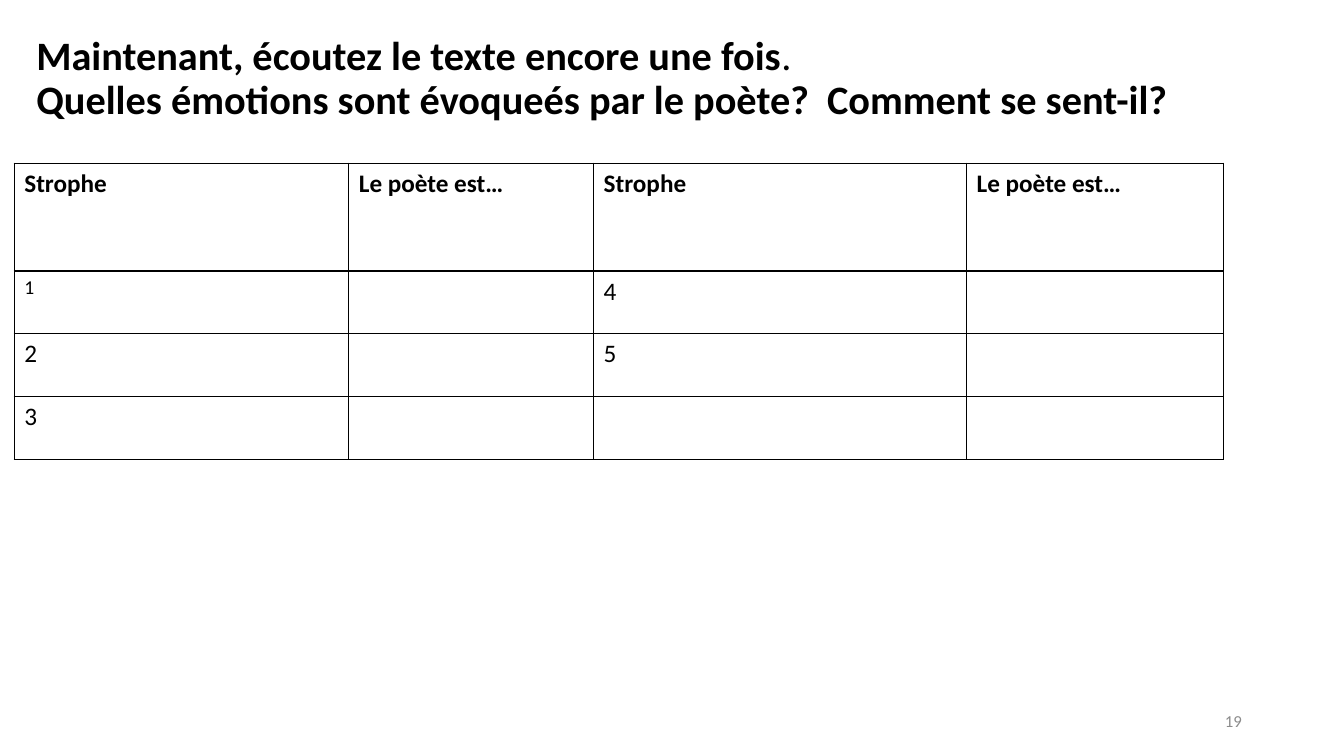
"""Build a slide with a listening question and a table of stanzas and emotions."""
from dataclasses import dataclass

import lxml.etree
import pptx
import pptx.dml.color
import pptx.enum.text
import pptx.oxml.ns
import pptx.util

Cm, Pt = pptx.util.Cm, pptx.util.Pt
RGB = pptx.dml.color.RGBColor
ALIGN = pptx.enum.text.PP_ALIGN
MIDDLE = pptx.enum.text.MSO_ANCHOR.MIDDLE
qn = pptx.oxml.ns.qn

TITLE_LINES = [
    [("Maintenant, écoutez le texte encore une fois", True), (".", False)],
    [("Quelles émotions sont évoqueés par le poète?  Comment se sent-il?", True)],
]
HEADINGS = ["Strophe", "Le poète est…"] * 2
STANZAS = [["1", "", "4", ""], ["2", "", "5", ""], ["3", "", "", ""]]
PAGE_NUMBER = "19"

COL_WIDTHS = [8.43, 6.17, 9.4, 6.48]
ROW_HEIGHTS = [2.72] + [1.58] * len(STANZAS)


@dataclass(frozen=True)
class Theme:
    font: str = "Calibri"
    ink: str = "000000"
    paper: str = "FFFFFF"
    muted: str = "8C8C8C"
    title: float = 28.8
    body: float = 18
    first: float = 14
    number: float = 12
    border: float = 1


THEME = Theme()


def add_run(p, text, size, color=THEME.ink, bold=False):
    r = p.add_run()
    r.text = text
    r.font.name = THEME.font
    r.font.size = Pt(size)
    r.font.bold = bold
    r.font.color.rgb = RGB.from_string(color)


def style_cell(cell):
    tc_pr = cell._tc.get_or_add_tcPr()
    for side in ("lnL", "lnR", "lnT", "lnB"):
        ln = lxml.etree.SubElement(tc_pr, qn(f"a:{side}"), w=str(Pt(THEME.border)))
        fill = lxml.etree.SubElement(ln, qn("a:solidFill"))
        lxml.etree.SubElement(fill, qn("a:srgbClr"), val=THEME.ink)
    cell.fill.solid()
    cell.fill.fore_color.rgb = RGB.from_string(THEME.paper)


def add_title(s):
    sp = s.shapes.title
    sp.left, sp.top, sp.width, sp.height = Cm(0.66), Cm(1.17), Cm(32), Cm(1.65)
    tf = sp.text_frame
    tf.word_wrap = True
    tf.auto_size = pptx.enum.text.MSO_AUTO_SIZE.NONE
    tf.vertical_anchor = MIDDLE
    p = tf.paragraphs[0]
    p.alignment = ALIGN.LEFT
    p.line_spacing = 0.9
    for i, line in enumerate(TITLE_LINES):
        if i:
            p.add_line_break()
        for text, bold in line:
            add_run(p, text, THEME.title, bold=bold)


def add_stanza_table(s):
    rows = [HEADINGS] + STANZAS
    table = s.shapes.add_table(
        len(rows), len(HEADINGS), Cm(0.36), Cm(4.11),
        Cm(sum(COL_WIDTHS)), Cm(sum(ROW_HEIGHTS)),
    ).table
    table.first_row = table.horz_banding = False
    for column, width in zip(table.columns, COL_WIDTHS):
        column.width = Cm(width)
    for i, (row, height, texts) in enumerate(zip(table.rows, ROW_HEIGHTS, rows)):
        row.height = Cm(height)
        for cell, text in zip(row.cells, texts):
            style_cell(cell)
            if text:
                size = THEME.first if text == "1" else THEME.body
                add_run(cell.text_frame.paragraphs[0], text, size, bold=i == 0)


def add_page_number(s):
    tf = s.shapes.add_textbox(Cm(23.93), Cm(17.65), Cm(7.62), Cm(1.02)).text_frame
    tf.word_wrap = True
    tf.vertical_anchor = MIDDLE
    p = tf.paragraphs[0]
    p.alignment = ALIGN.RIGHT
    add_run(p, PAGE_NUMBER, THEME.number, THEME.muted)


def main():
    prs = pptx.Presentation()
    prs.slide_width, prs.slide_height = Cm(33.87), Cm(19.05)
    s = prs.slides.add_slide(prs.slide_layouts.get_by_name("Title Only"))
    add_title(s)
    add_stanza_table(s)
    add_page_number(s)
    prs.save("out.pptx")


if __name__ == "__main__":
    main()
